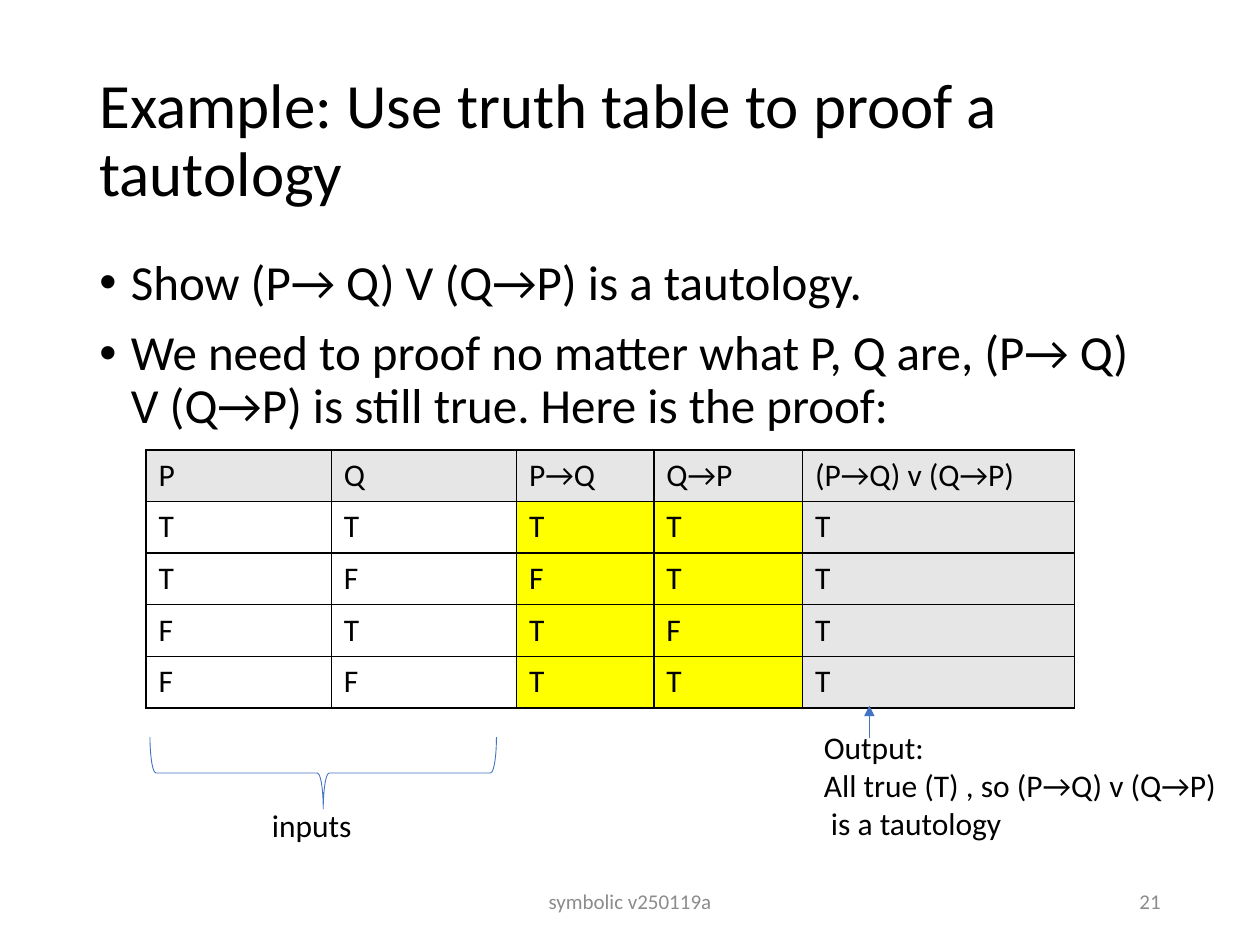
from lxml.etree import SubElement
from pptx import Presentation
from pptx.dml.color import RGBColor
from pptx.enum.shapes import MSO_CONNECTOR, MSO_SHAPE
from pptx.enum.text import MSO_ANCHOR, PP_ALIGN
from pptx.oxml.ns import qn
from pptx.util import Inches, Pt

FONT = "Calibri"
BLACK, GRAY, YELLOW, BLUE, MUTED = "000000", "E7E6E6", "FFFF00", "4472C4", "8C8C8C"

TRUTH_TABLE = [
    ["P", "Q", "P→Q", "Q→P", "(P→Q) v (Q→P)"],
    ["T", "T", "T", "T", "T"],
    ["T", "F", "F", "T", "T"],
    ["F", "T", "T", "F", "T"],
    ["F", "F", "T", "T", "T"],
]
COLUMN_WIDTHS = [1.47, 1.47, 1.09, 1.18, 2.16]
COLUMN_FILLS = [None, None, YELLOW, YELLOW, GRAY]
ROW_HEIGHT = 0.41


def color(hex_value):
    return RGBColor.from_string(hex_value)


def style_font(paragraph, size, hex_value=BLACK):
    paragraph.font.name = FONT
    paragraph.font.size = Pt(size)
    paragraph.font.color.rgb = color(hex_value)


def add_text(slide, box, lines, size, hex_value=BLACK, align=PP_ALIGN.LEFT,
             anchor=MSO_ANCHOR.TOP, wrap=True, line_spacing=1.0):
    frame = slide.shapes.add_textbox(*map(Inches, box)).text_frame
    frame.word_wrap = wrap
    frame.vertical_anchor = anchor
    for index, line in enumerate(lines):
        paragraph = frame.paragraphs[0] if index == 0 else frame.add_paragraph()
        paragraph.text = line
        paragraph.alignment = align
        paragraph.line_spacing = line_spacing
        style_font(paragraph, size, hex_value)
    return frame


def add_bullets(slide, box, lines, size):
    frame = add_text(slide, box, lines, size, line_spacing=0.9)
    for paragraph in frame.paragraphs:
        paragraph.space_before = Pt(10)
        properties = paragraph._p.get_or_add_pPr()
        properties.set("marL", str(Inches(0.25)))
        properties.set("indent", str(-Inches(0.25)))
        SubElement(properties, qn("a:buFont"), typeface="Arial")
        SubElement(properties, qn("a:buChar"), char="•")


def fill_cell(cell, hex_value):
    if hex_value:
        cell.fill.solid()
        cell.fill.fore_color.rgb = color(hex_value)
    else:
        cell.fill.background()


def border_cell(cell):
    properties = cell._tc.get_or_add_tcPr()
    for position, side in enumerate(("a:lnL", "a:lnR", "a:lnT", "a:lnB")):
        border = SubElement(properties, qn(side), w=str(Pt(1)))
        solid = SubElement(border, qn("a:solidFill"))
        SubElement(solid, qn("a:srgbClr"), val=BLACK)
        properties.insert(position, border)


def add_truth_table(slide, left, top):
    table = slide.shapes.add_table(
        len(TRUTH_TABLE), len(COLUMN_WIDTHS), Inches(left), Inches(top),
        Inches(sum(COLUMN_WIDTHS)), Inches(ROW_HEIGHT * len(TRUTH_TABLE))).table
    table.first_row = table.horz_banding = False
    for column, width in zip(table.columns, COLUMN_WIDTHS):
        column.width = Inches(width)
    for row_index, values in enumerate(TRUTH_TABLE):
        table.rows[row_index].height = Inches(ROW_HEIGHT)
        for column_index, value in enumerate(values):
            cell = table.cell(row_index, column_index)
            cell.text = value
            style_font(cell.text_frame.paragraphs[0], 18)
            fill_cell(cell, COLUMN_FILLS[column_index] if row_index else GRAY)
            border_cell(cell)


def add_arrow(slide, start, end):
    arrow = slide.shapes.add_connector(
        MSO_CONNECTOR.STRAIGHT, *map(Inches, (*start, *end)))
    arrow.line.color.rgb = color(BLUE)
    arrow.line.width = Pt(0.5)
    SubElement(arrow.line._get_or_add_ln(), qn("a:tailEnd"), type="triangle")
    SubElement(arrow._element.spPr, qn("a:effectLst"))


def add_brace(slide, box):
    brace = slide.shapes.add_shape(MSO_SHAPE.RIGHT_BRACE, *map(Inches, box))
    brace.rotation = 90
    brace.shadow.inherit = False
    brace.fill.background()
    brace.line.color.rgb = color(BLUE)
    brace.line.width = Pt(0.5)


def main():
    presentation = Presentation()
    presentation.slide_width = Inches(10)
    presentation.slide_height = Inches(7.5)
    slide = presentation.slides.add_slide(presentation.slide_layouts[6])

    add_text(slide, (0.69, 0.4, 8.62, 1.45),
             ["Example: Use truth table to proof a tautology"], 36,
             anchor=MSO_ANCHOR.MIDDLE, line_spacing=0.9)
    add_bullets(slide, (0.69, 2, 8.62, 4.76), [
        "Show (P→ Q) V (Q→P) is a tautology.",
        "We need to proof no matter what P, Q are, (P→ Q) V (Q→P) "
        "is still true. Here is the proof:",
    ], 28)
    add_text(slide, (3.31, 6.95, 3.38, 0.4), ["symbolic v250119a"], 12, MUTED,
             PP_ALIGN.CENTER, MSO_ANCHOR.MIDDLE)
    add_text(slide, (7.06, 6.95, 2.25, 0.4), ["21"], 12, MUTED,
             PP_ALIGN.RIGHT, MSO_ANCHOR.MIDDLE)
    add_truth_table(slide, 1.16, 3.57)
    add_text(slide, (6.44, 5.73, 3.39, 1.01), [
        "Output:",
        "All true (T) , so (P→Q) v (Q→P)",
        " is a tautology",
    ], 18, wrap=False)
    add_arrow(slide, (6.9, 5.86), (6.9, 5.6))
    add_text(slide, (2.06, 6.35, 0.84, 0.4), ["inputs"], 18, wrap=False)
    add_brace(slide, (2.28, 4.76, 0.57, 2.75))
    presentation.save("out.pptx")


if __name__ == "__main__":
    main()
